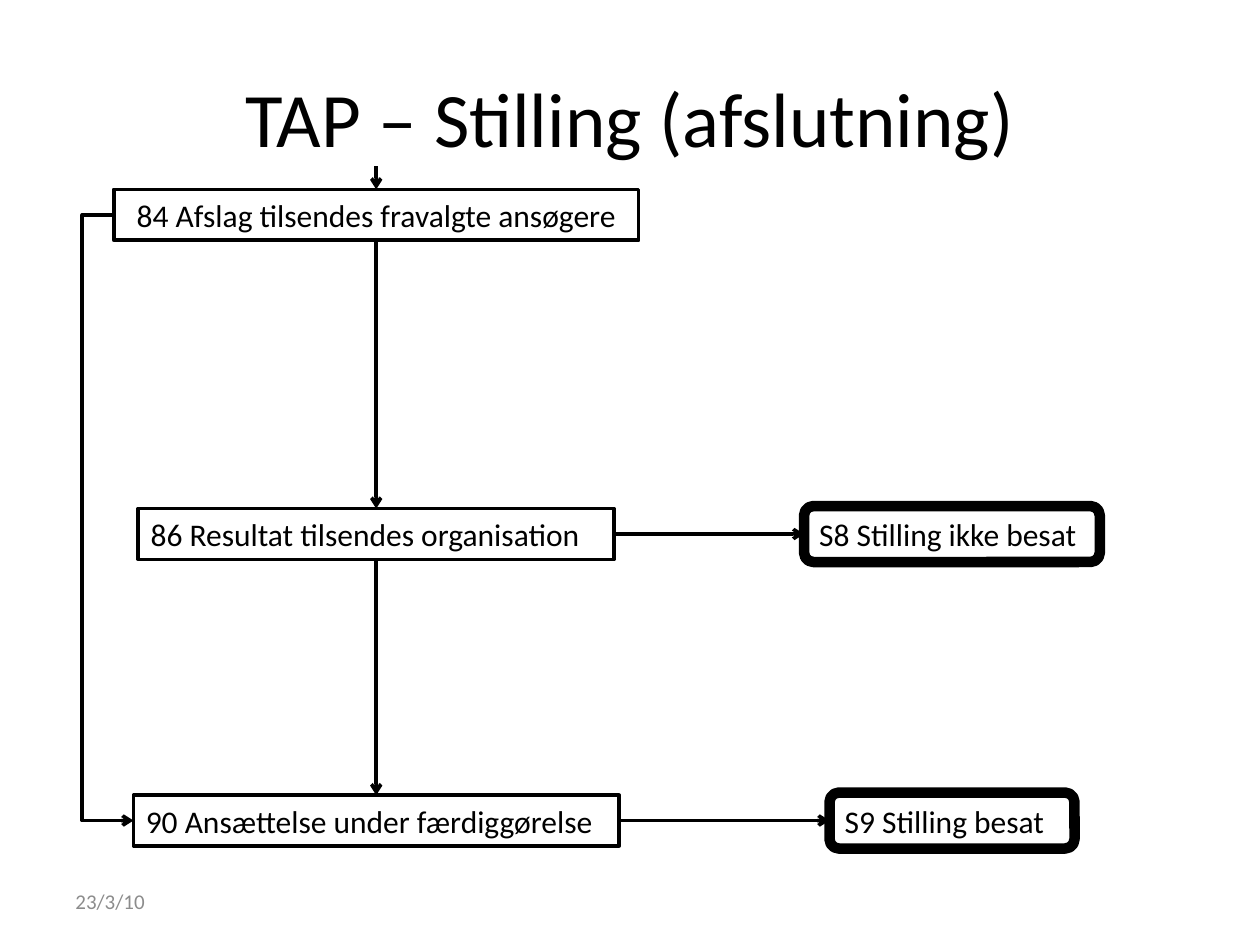
from lxml.etree import SubElement
from pptx import Presentation
from pptx.dml.color import RGBColor
from pptx.enum.shapes import MSO_CONNECTOR, MSO_SHAPE
from pptx.enum.text import MSO_ANCHOR, PP_ALIGN
from pptx.oxml.ns import qn
from pptx.util import Pt

BLACK = RGBColor(0x00, 0x00, 0x00)
GREY = RGBColor(0x8C, 0x8C, 0x8C)
TOP, LEFT, BOTTOM, RIGHT = range(4)
STEP_CENTER, STATUS_CENTER = 215, 544
ROWS = (122.75, 305.15, 468.9)


def write_text(shape, text, size, color=BLACK, alignment=PP_ALIGN.LEFT):
    frame = shape.text_frame
    frame.word_wrap = True
    frame.vertical_anchor = MSO_ANCHOR.MIDDLE
    paragraph = frame.paragraphs[0]
    paragraph.alignment = alignment
    run = paragraph.add_run()
    run.text = text
    for name, value in {"name": "Calibri", "size": Pt(size)}.items():
        setattr(run.font, name, value)
    run.font.color.rgb = color


def add_label(slide, box, text, size, **style):
    write_text(slide.shapes.add_textbox(*map(Pt, box)), text, size, **style)


def add_box(slide, kind, center, width, height, line_width, text, alignment=PP_ALIGN.LEFT):
    """Add an outlined flow chart box around its centre point."""
    x, y = center
    shape = slide.shapes.add_shape(
        kind, Pt(x - width / 2), Pt(y - height / 2), Pt(width), Pt(height))
    shape.shadow.inherit = False
    shape.fill.background()
    shape.line.color.rgb = BLACK
    shape.line.width = Pt(line_width)
    write_text(shape, text, 18, alignment=alignment)
    return shape


def add_step(slide, y, width, text, **style):
    return add_box(slide, MSO_SHAPE.FLOWCHART_PROCESS, (STEP_CENTER, y),
                   width, 29, 2, text, **style)


def add_status(slide, y, width, text):
    return add_box(slide, MSO_SHAPE.FLOWCHART_ALTERNATE_PROCESS, (STATUS_CENTER, y),
                   width, 32, 6, text)


def add_arrow(slide, target, target_side, source=None, source_side=None,
              start=(0, 0), kind=MSO_CONNECTOR.STRAIGHT):
    """Add an arrow to target, from a side of source or from a free start point."""
    x, y = map(Pt, start)
    connector = slide.shapes.add_connector(kind, x, y, x, y)
    if source is not None:
        connector.begin_connect(source, source_side)
    connector.end_connect(target, target_side)
    connector.line.color.rgb = BLACK
    connector.line.width = Pt(2)
    line = connector.line._get_or_add_ln()
    SubElement(line, qn("a:tailEnd"), type="arrow")
    SubElement(connector._element.spPr, qn("a:effectLst"))
    return connector


def add_bypass(slide, source, target, offset):
    """Add an elbow arrow that runs the given offset to the left of source."""
    connector = add_arrow(slide, target, LEFT, source, LEFT, kind=MSO_CONNECTOR.ELBOW)
    ratio = -round(Pt(offset) / connector.width * 100000)
    guides = connector._element.spPr.find(qn("a:prstGeom")).get_or_add_avLst()
    SubElement(guides, qn("a:gd"), name="adj1", fmla=f"val {ratio}")


def add_flow_chart(slide):
    rejection = add_step(slide, ROWS[0], 300, "84 Afslag tilsendes fravalgte ansøgere",
                         alignment=PP_ALIGN.CENTER)
    result = add_step(slide, ROWS[1], 272, "86 Resultat tilsendes organisation")
    hiring = add_step(slide, ROWS[2], 277.5, "90 Ansættelse under færdiggørelse")
    vacant = add_status(slide, ROWS[1], 169, "S8 Stilling ikke besat")
    filled = add_status(slide, ROWS[2], 140, "S9 Stilling besat")

    add_arrow(slide, rejection, TOP, start=(STEP_CENTER, 95))
    for source, target in ((rejection, result), (result, hiring)):
        add_arrow(slide, target, TOP, source, BOTTOM)
    for source, target in ((result, vacant), (hiring, filled)):
        add_arrow(slide, target, LEFT, source, RIGHT)
    add_bypass(slide, rejection, hiring, 18)


def main():
    presentation = Presentation()
    presentation.slide_width = Pt(720)
    presentation.slide_height = Pt(540)
    slide = presentation.slides.add_slide(presentation.slide_layouts[6])
    add_label(slide, (36, 21.6, 648, 90), "TAP – Stilling (afslutning)", 44,
              alignment=PP_ALIGN.CENTER)
    add_label(slide, (36, 500.5, 168, 28.75), "23/3/10", 12, color=GREY)
    add_flow_chart(slide)
    presentation.save("out.pptx")


if __name__ == "__main__":
    main()
